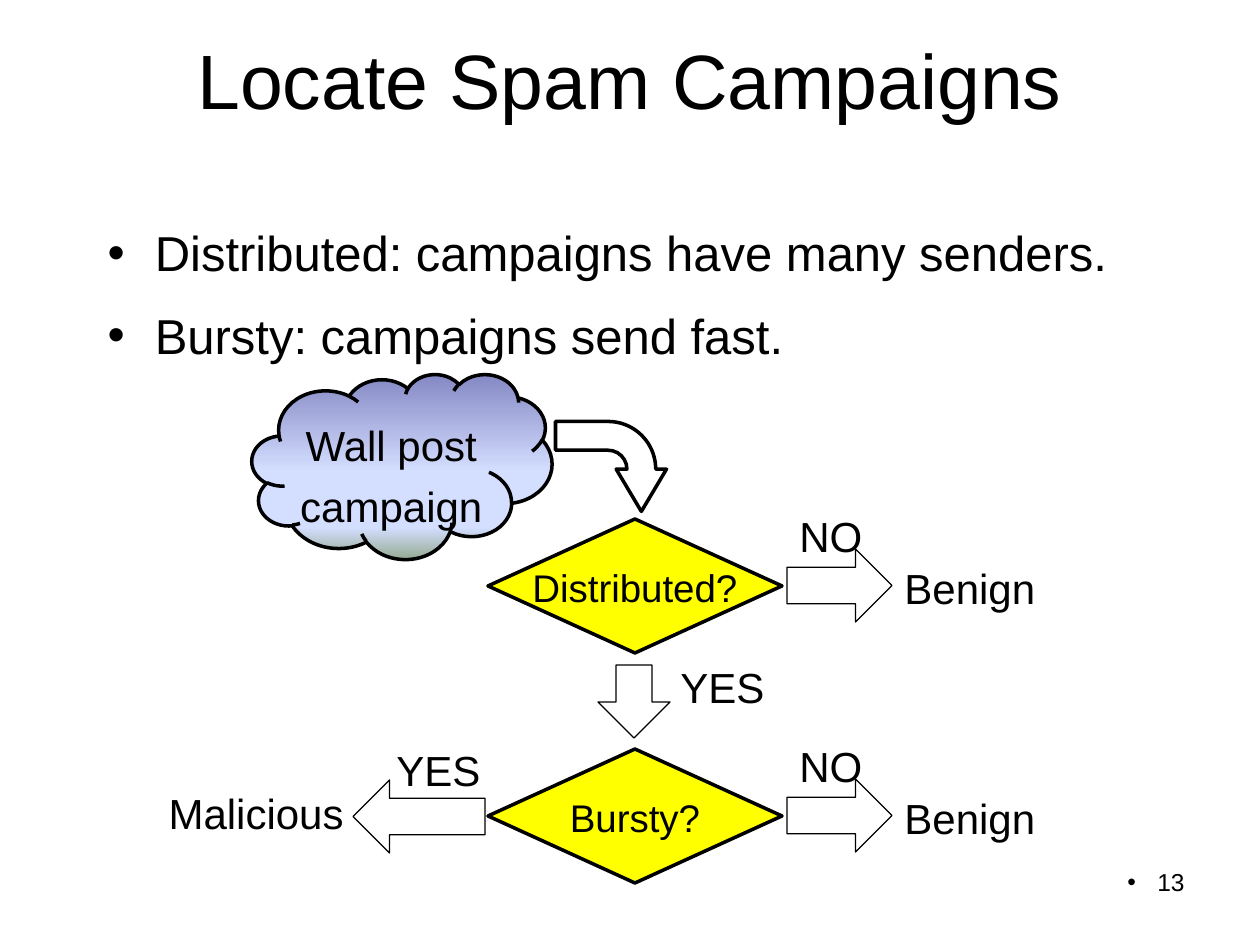
import pptx
import pptx.util
import pptx.dml.color
import pptx.enum.shapes
import pptx.enum.text
from lxml import etree

SHAPE = pptx.enum.shapes.MSO_SHAPE
ALIGN = pptx.enum.text.PP_ALIGN
ANCHOR = pptx.enum.text.MSO_ANCHOR
FIT = pptx.enum.text.MSO_AUTO_SIZE
A = "http://schemas.openxmlformats.org/drawingml/2006/main"
EMU_PER_PX = 914400 / 126

THEME = {
    "font": "Arial",
    "ink": "000000",
    "decision": "FFFF00",
    "cloud": [(0, "8488C4"), (53, "D4DEFF"), (83, "D4DEFF"), (100, "96AB94")],
    "sizes": {"title": 44, "body": 28, "label": 24, "decision": 22, "number": 14},
    "thick": 2,
    "thin": 0.75,
}

TITLE = "Locate Spam Campaigns"
POINTS = ["Distributed: campaigns have many senders.", "Bursty: campaigns send fast."]
SOURCE = "Wall post campaign"
NUMBER = "13"
DECISIONS = ["Distributed?", "Bursty?"]
ROW_TOP, ROW_PITCH = 519, 230
ROW_ARROW = (787, 30, 105, 73)
ROW_LABELS = [("NO", 787, -11, 95), ("Benign", 892, 41, 294)]
ARROWS = [
    (SHAPE.DOWN_ARROW, (598, 665, 72, 73), 0),
    (SHAPE.RIGHT_ARROW, (353, 780, 132, 73), 180),
]
LABELS = [
    ("YES", 668, 659, 120, ALIGN.LEFT),
    ("YES", 384, 742, 120, ALIGN.LEFT),
    ("Malicious", 16, 785, 340, ALIGN.RIGHT),
]


def px(n):
    return pptx.util.Emu(round(n * EMU_PER_PX))


def rgb(code):
    return pptx.dml.color.RGBColor.from_string(code)


def apply(obj, values):
    for name, value in values.items():
        setattr(obj, name, value)


def place(sp, box):
    apply(sp, dict(zip(("left", "top", "width", "height"), map(px, box))))


def write(sp, lines, role, align=ALIGN.LEFT, spacing=1.0, gap=0, **frame):
    tf = sp.text_frame
    apply(tf, {"word_wrap": True, "auto_size": FIT.NONE,
               "vertical_anchor": ANCHOR.TOP, **frame})
    for i, line in enumerate(lines):
        p = tf.paragraphs[0] if i == 0 else tf.add_paragraph()
        apply(p, {"alignment": align, "line_spacing": spacing,
                  "space_before": pptx.util.Pt(gap if i else 0)})
        r = p.add_run()
        r.text = line
        apply(r.font, {"name": THEME["font"],
                       "size": pptx.util.Pt(THEME["sizes"][role])})
        r.font.color.rgb = rgb(THEME["ink"])


def add_text(s, box, text, role, **fmt):
    sp = s.shapes.add_textbox(*map(px, box))
    write(sp, [text], role, **fmt)
    return sp


def add_label(s, text, x, y, w, align=ALIGN.LEFT):
    add_text(s, (x, y, w, 58), text, "label", align=align, spacing=0.9,
             margin_top=px(8))


def add_outline(s, kind, box, weight, fill=None, rotation=0):
    sp = s.shapes.add_shape(kind, *map(px, box))
    sp.shadow.inherit = False
    sp.rotation = rotation
    if fill:
        sp.fill.solid()
        sp.fill.fore_color.rgb = rgb(fill)
    else:
        sp.fill.background()
    sp.line.color.rgb = rgb(THEME["ink"])
    sp.line.width = pptx.util.Pt(weight)
    return sp


def set_gradient(sp, stops):
    sp.fill.gradient()
    grad = sp._element.spPr.find(f"{{{A}}}gradFill")
    for child in list(grad):
        grad.remove(child)
    gs_list = etree.SubElement(grad, f"{{{A}}}gsLst")
    for position, color in stops:
        gs = etree.SubElement(gs_list, f"{{{A}}}gs", pos=str(position * 1000))
        etree.SubElement(gs, f"{{{A}}}srgbClr", val=color)
    etree.SubElement(grad, f"{{{A}}}lin", ang="5400000", scaled="0")


def add_bullet(p, hang):
    pPr = p._p.get_or_add_pPr()
    pPr.set("marL", str(px(hang)))
    pPr.set("indent", str(-px(hang)))
    etree.SubElement(pPr, f"{{{A}}}buFont", typeface=THEME["font"])
    etree.SubElement(pPr, f"{{{A}}}buChar", char="•")


def add_decision_row(s, text, top):
    sp = add_outline(s, SHAPE.FLOWCHART_DECISION, (488, top, 294, 134),
                     THEME["thick"], THEME["decision"])
    write(sp, [text], "decision", align=ALIGN.CENTER, spacing=0.9, word_wrap=False,
          margin_left=px(3), margin_right=px(3), margin_top=px(17),
          margin_bottom=px(3))
    x, dy, w, h = ROW_ARROW
    add_outline(s, SHAPE.RIGHT_ARROW, (x, top + dy, w, h), THEME["thin"])
    for label, x, dy, w in ROW_LABELS:
        add_label(s, label, x, top + dy, w)


def main():
    prs = pptx.Presentation()
    apply(prs, {"slide_width": px(1260), "slide_height": px(945)})
    s = prs.slides.add_slide(prs.slide_layouts[1])

    title, body = s.placeholders
    place(title, (63, 0, 1134, 158))
    write(title, [TITLE], "title", align=ALIGN.CENTER, vertical_anchor=ANCHOR.MIDDLE)
    place(body, (95, 199, 1134, 168))
    write(body, POINTS, "body", spacing=1.2, gap=7, margin_top=px(12))

    cloud = add_outline(s, SHAPE.CLOUD, (252, 374, 300, 185), THEME["thick"])
    set_gradient(cloud, THEME["cloud"])
    write(cloud, [SOURCE], "label", align=ALIGN.CENTER, spacing=1.2,
          margin_left=px(3), margin_right=px(3), margin_top=px(8),
          margin_bottom=px(3))

    bend = add_outline(s, SHAPE.BENT_ARROW, (566, 411, 90, 111), THEME["thick"],
                       rotation=90)
    for i, value in enumerate((0.32, 0.28, 0.47, 0.56)):
        bend.adjustments[i] = value

    for i, text in enumerate(DECISIONS):
        add_decision_row(s, text, ROW_TOP + i * ROW_PITCH)
    for kind, box, rotation in ARROWS:
        add_outline(s, kind, box, THEME["thin"], rotation=rotation)
    for label in LABELS:
        add_label(s, *label)

    number = add_text(s, (903, 861, 294, 66), NUMBER, "number", align=ALIGN.RIGHT)
    add_bullet(number.text_frame.paragraphs[0], 30)

    prs.save("out.pptx")


if __name__ == "__main__":
    main()
